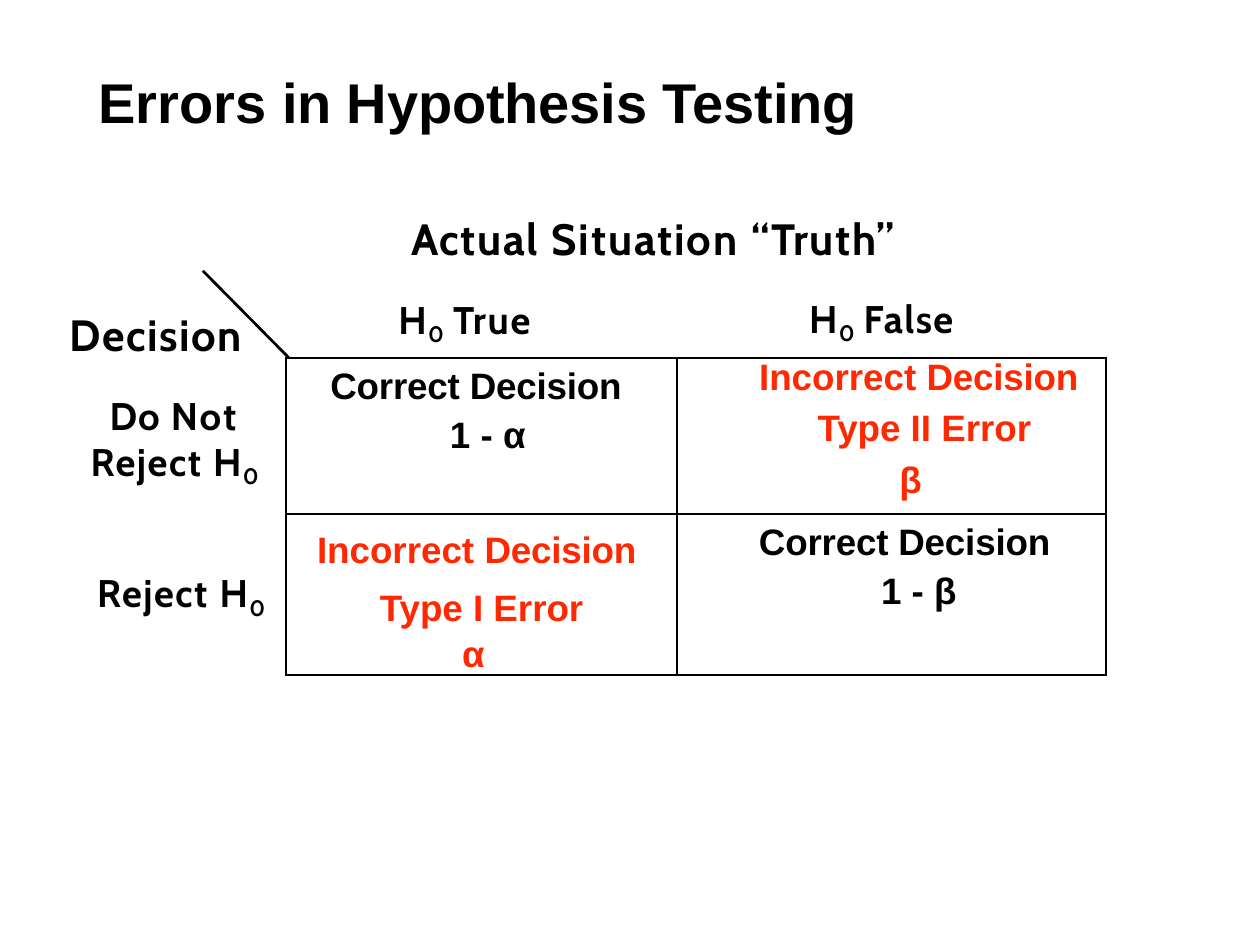
from lxml.etree import SubElement
from pptx import Presentation
from pptx.dml.color import RGBColor
from pptx.enum.shapes import MSO_CONNECTOR
from pptx.enum.text import PP_ALIGN
from pptx.oxml.ns import qn
from pptx.util import Cm, Pt

COLORS = {"ink": "000000", "error": "FF2800"}
BREAK = ("\v", 0)


def paragraph_of(*runs, **layout):
    """Pair (text, tracking, baseline) runs with their paragraph layout."""
    return runs, layout


class SlideBuilder:
    """Holds the style and the current slide, and draws each kind of element."""

    heading_font = "Arial"
    label_font = "Cabin"
    border_width = 1.2

    def __init__(self, presentation):
        self.slide = presentation.slides.add_slide(presentation.slide_layouts[6])

    def fill_text(self, frame, paragraphs, font, size, color="ink"):
        for index, (runs, layout) in enumerate(paragraphs):
            paragraph = frame.add_paragraph() if index else frame.paragraphs[0]
            paragraph.font.name = font
            paragraph.font.size = Pt(layout.get("size", size))
            paragraph.font.bold = True
            paragraph.font.color.rgb = RGBColor.from_string(COLORS[color])
            paragraph.alignment = layout.get("align", PP_ALIGN.LEFT)
            paragraph.space_before = Pt(layout.get("before", 0))
            paragraph.line_spacing = layout.get("line", 1.0)
            properties = paragraph._p.get_or_add_pPr()
            for name, key in (("marL", "left"), ("marR", "right"), ("indent", "first")):
                properties.set(name, str(Cm(layout.get(key, 0))))
            for text, tracking, *baseline in runs:
                if text == "\v":
                    paragraph.add_line_break()
                    continue
                run = paragraph.add_run()
                run.text = text
                run_properties = run._r.get_or_add_rPr()
                run_properties.set("spc", str(round(tracking * 100)))
                if baseline:
                    run_properties.set("baseline", str(baseline[0] * 1000))

    def text(self, left, top, width, height, paragraphs, font=label_font, size=22):
        frame = self.slide.shapes.add_textbox(
            Cm(left), Cm(top), Cm(width), Cm(height)).text_frame
        frame.word_wrap = True
        frame.margin_left = frame.margin_right = frame.margin_top = frame.margin_bottom = 0
        self.fill_text(frame, paragraphs, font, size)

    def line(self, x1, y1, x2, y2, width):
        connector = self.slide.shapes.add_connector(
            MSO_CONNECTOR.STRAIGHT, Cm(x1), Cm(y1), Cm(x2), Cm(y2))
        connector.line.color.rgb = RGBColor.from_string(COLORS["ink"])
        connector.line.width = Pt(width)
        SubElement(connector._element.spPr, qn("a:effectLst"))

    def border(self, cell):
        properties = cell._tc.get_or_add_tcPr()
        for index, side in enumerate(("lnL", "lnR", "lnT", "lnB")):
            edge = properties.makeelement(
                qn(f"a:{side}"), {"w": str(Pt(self.border_width))})
            fill = SubElement(edge, qn("a:solidFill"))
            SubElement(fill, qn("a:srgbClr"), val=COLORS["ink"])
            properties.insert(index, edge)

    def table(self, left, top, widths, heights, rows):
        table = self.slide.shapes.add_table(
            len(heights), len(widths), Cm(left), Cm(top),
            Cm(sum(widths)), Cm(sum(heights))).table
        table.first_row = table.horz_banding = False
        for column, width in zip(table.columns, widths):
            column.width = Cm(width)
        for row, height in zip(table.rows, heights):
            row.height = Cm(height)
        for row, outcomes in zip(table.rows, rows):
            for cell, (color, paragraphs) in zip(row.cells, outcomes):
                cell.fill.background()
                cell.margin_left = cell.margin_right = 0
                cell.margin_top = cell.margin_bottom = 0
                self.border(cell)
                self.fill_text(cell.text_frame, paragraphs, self.heading_font, 21, color)


def correct_decision(symbol, left, first, before):
    """Describe a cell for a correct decision and its probability."""
    return "ink", [paragraph_of(
        ("Correct Decision ", -0.1), BREAK, ("1 - ", 0), (symbol, -0.1),
        left=left, first=first, before=before, line=1.2)]


def main():
    presentation = Presentation()
    presentation.slide_width, presentation.slide_height = Cm(25.4), Cm(19.05)
    builder = SlideBuilder(presentation)
    center = PP_ALIGN.CENTER

    for truth, tracking, left, top in (("True", 1, 8, 5.97), ("False", 0.8, 16.28, 5.94)):
        builder.text(left, top, 3.2, 0.94, [paragraph_of(
            ("H", 0.8), ("0 ", 1.2, -21), (truth, tracking), left=0.03)])

    reject_null = ("Reject ", 0.9), ("H", 0.8), ("0", 1.3, -21)
    builder.text(1.93, 11.48, 3.76, 0.94, [paragraph_of(*reject_null, left=0.03)])
    builder.text(8.26, 4.27, 11.48, 1.09, [paragraph_of(
        ("Actual ", 1), ("Situation ", 1.1), ("“Truth”", 0.9), left=0.03)], size=25)
    builder.text(1.35, 6.2, 4.22, 3.58, [
        paragraph_of(("Decision", 0.9), left=0.89, first=-0.84, size=25),
        paragraph_of(("Do ", 0.7), ("Not ", 1.2), BREAK, *reject_null,
                     left=0.48, first=0.38, before=18.2)])
    builder.line(4.09, 5.46, 5.82, 7.21, 1.56)

    type_two_error = "error", [
        paragraph_of(("Incorrect ", 0), ("Decision", -0.1),
                     align=center, left=1.09, before=0.2),
        paragraph_of(("Type II Error", 0), align=center, left=1.32, before=5.8),
        paragraph_of(("β", 0), align=center, left=0.76, before=6.2)]
    type_one_error = "error", [
        paragraph_of(("Incorrect ", 0), ("Decision ", -0.1), BREAK, ("Type I Error", 0),
                     align=center, left=0.61, right=0.61, before=1.4, line=Pt(32.9)),
        paragraph_of(("α", 0), align=center, right=0.33, line=Pt(26.1))]
    builder.table(5.77, 7.21, (7.88, 8.65), (3.15, 3.25), (
        (correct_decision("α", 3.3, -2.41, 13.7), type_two_error),
        (type_one_error, correct_decision("β", 4.11, -2.46, 9.2))))

    builder.text(1.98, 1.37, 21.67, 1.35, [paragraph_of(
        ("Errors ", 0), ("in Hypothesis Testing", -0.1))], builder.heading_font, 32)
    presentation.save("out.pptx")


if __name__ == "__main__":
    main()
